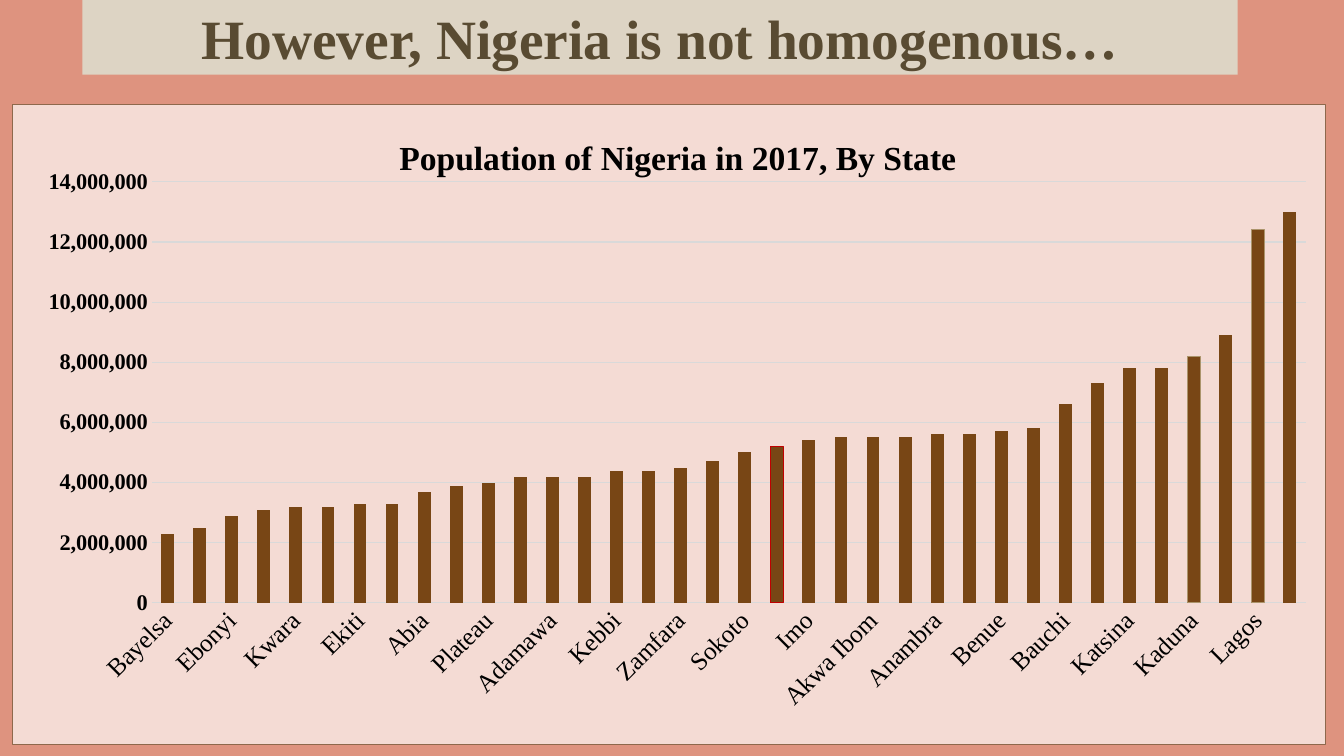
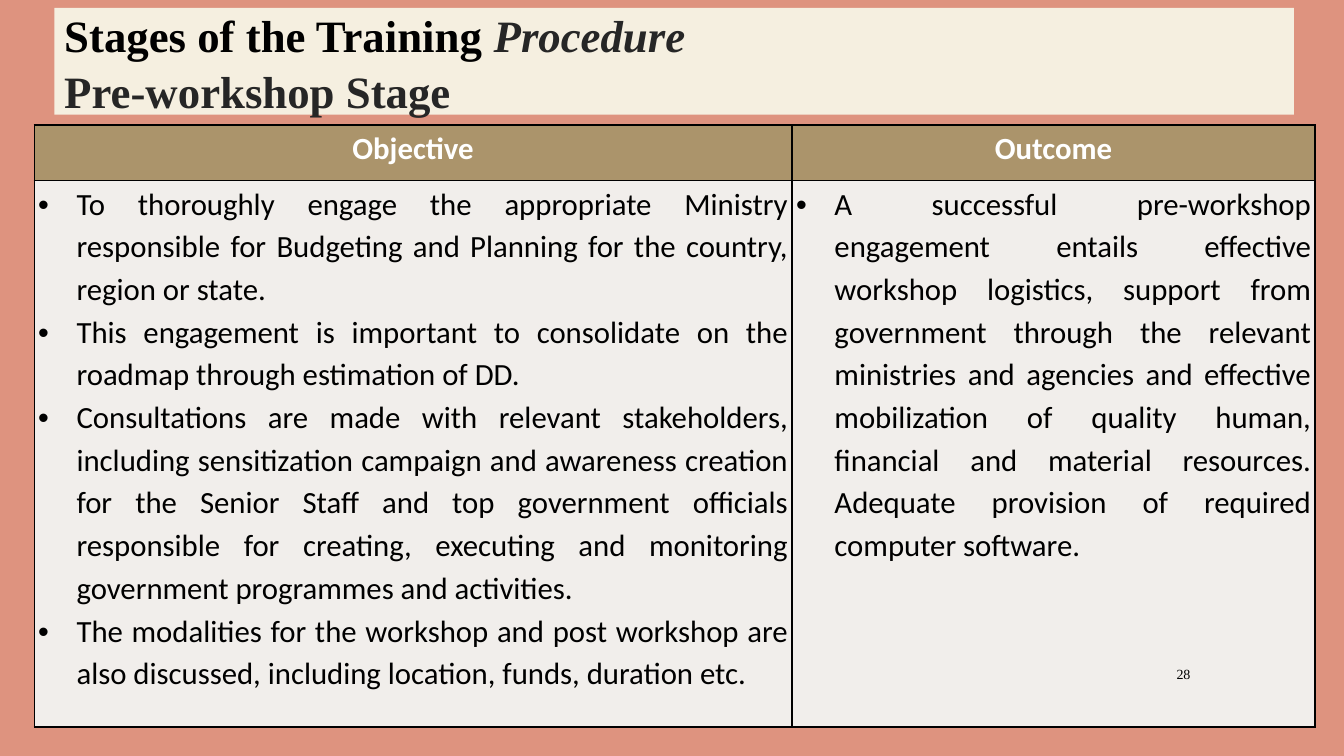
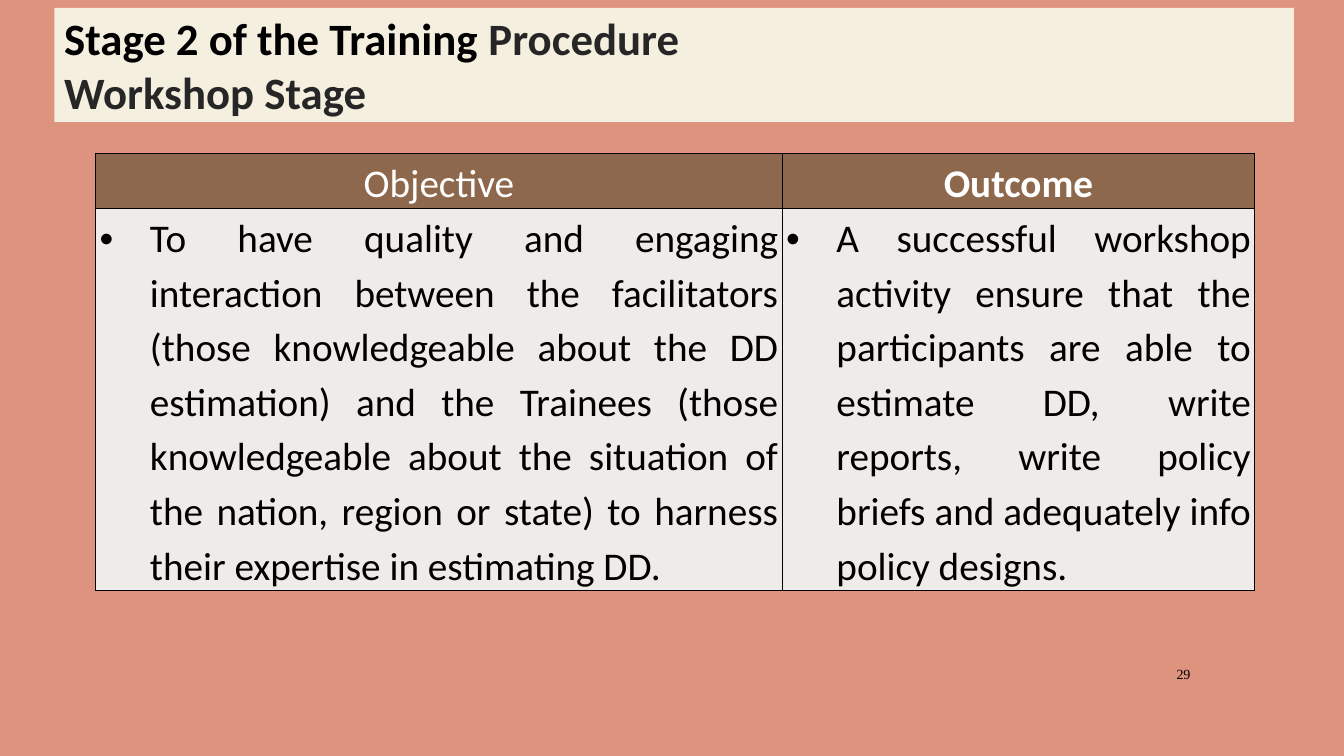
from lxml.etree import SubElement
from pptx import Presentation
from pptx.chart.data import CategoryChartData
from pptx.dml.color import RGBColor
from pptx.enum.chart import XL_CHART_TYPE as ChartType, XL_TICK_MARK as TickMark
from pptx.enum.text import MSO_ANCHOR as Anchor, PP_ALIGN as Align
from pptx.oxml import parse_xml
from pptx.oxml.ns import nsdecls, qn
from pptx.util import Cm, Pt

SERIF = "Times New Roman"
SANS = "Calibri"
BLACK, WHITE, CHARCOAL = "000000", "FFFFFF", "262626"
SALMON, BLUSH, CREAM, SAND = "DE937F", "F4DBD4", "F5EFE0", "DDD4C4"
TAN, UMBER, OLIVE, BRONZE = "AB946B", "8E684C", "594B32", "784615"
GREY, RED = "D9D9D9", "C00000"

POPULATION = {
    "Bayelsa": [2.3], "Nasarawa": [2.5], "Ebonyi": [2.9], "Taraba": [3.1],
    "Kwara": [3.2], "Gombe": [3.2], "Ekiti": [3.3], "Yobe": [3.3],
    "Abia": [3.7], "Cross River": [3.9], "Plateau": [4.0], "Edo": [4.2],
    "Adamawa": [4.2, 4.2], "Kebbi": [4.4], "Kogi": [4.4], "Zamfara": [4.5],
    "Ondo": [4.7], "Sokoto": [5.0], "Ogun": [5.2], "Imo": [5.4],
    "Akwa Ibom": [5.5, 5.5], "Niger": [5.5], "Anambra": [5.6],
    "Delta": [5.6], "Benue": [5.7], "Jigawa": [5.8], "Bauchi": [6.6],
    "Rivers": [7.3], "Katsina": [7.8], "Oyo": [7.8], "Kaduna": [8.2],
    "Enugu": [8.9], "Lagos": [12.4], "Kano": [13.0],
}
OUTLINED = {"Ogun": RED, "Kaduna": TAN, "Lagos": TAN}


def rgb(value):
    return RGBColor.from_string(value)


def paint(fill, value):
    fill.solid()
    fill.fore_color.rgb = rgb(value)


def style(font, size, color=BLACK, name=SERIF, bold=False, italic=False):
    font.size, font.name, font.bold, font.italic = Pt(size), name, bold, italic
    font.color.rgb = rgb(color)


def write(paragraph, text, **look):
    for number, line in enumerate(text.split("\n")):
        if number:
            paragraph.add_line_break()
        if line:
            run = paragraph.add_run()
            run.text = line
            style(run.font, **look)


def place(parent, index, **position):
    layout = parent.find(qn("c:layout"))
    if layout is None:
        layout = parse_xml(f"<c:layout {nsdecls('c')}/>")
        parent.insert(index, layout)
    manual = SubElement(layout, qn("c:manualLayout"))
    for tag, value in position.items():
        SubElement(manual, qn(f"c:{tag}"), val=str(value))


class Deck:
    def __init__(self):
        self.show = Presentation()
        self.show.slide_width, self.show.slide_height = Cm(33.87), Cm(19.05)

    def slide(self):
        self.page = self.show.slides.add_slide(self.show.slide_layouts[6])
        paint(self.page.background.fill, SALMON)

    def box(self, left, top, width, height, align):
        area = self.page.shapes.add_textbox(
            Cm(left), Cm(top), Cm(width), Cm(height))
        frame = area.text_frame
        frame.word_wrap = True
        frame.vertical_anchor = Anchor.MIDDLE
        frame.paragraphs[0].alignment = align
        return area, frame.paragraphs[0]

    def band(self, bounds, fill, runs, align=Align.LEFT, spacing=1.0, **look):
        area, heading = self.box(*bounds, align)
        paint(area.fill, fill)
        heading.line_spacing = spacing
        for text, change in runs:
            write(heading, text, **{**look, "bold": True, **change})

    def number(self, value):
        write(self.box(28.75, 16.59, 1.5, 0.79, Align.RIGHT)[1],
              str(value), size=10)

    def cell(self, cell, fill):
        cell.margin_left = cell.margin_right = Cm(0.1)
        cell.margin_top = cell.margin_bottom = 0
        for side in "LRTB":
            cell._tc.get_or_add_tcPr().append(parse_xml(
                f'<a:ln{side} {nsdecls("a")} w="12700"><a:solidFill>'
                f'<a:srgbClr val="{BLACK}"/></a:solidFill></a:ln{side}>'))
        paint(cell.fill, fill)

    def line(self, frame, first, align):
        paragraph = frame.paragraphs[0] if first else frame.add_paragraph()
        paragraph.alignment = align
        paragraph.line_spacing = 1.14
        return paragraph

    def stage_table(self, left, top, widths, heights, size, indent,
                    head_fill, body_fill, columns):
        table = self.page.shapes.add_table(
            2, len(columns), Cm(left), Cm(top),
            Cm(sum(widths)), Cm(sum(heights))).table
        table.first_row = table.horz_banding = False
        for row, height in zip(table.rows, heights):
            row.height = Cm(height)
        for index, (heading, bold, points) in enumerate(columns):
            table.columns[index].width = Cm(widths[index])
            head, body = table.cell(0, index), table.cell(1, index)
            self.cell(head, head_fill)
            self.cell(body, body_fill)
            write(self.line(head.text_frame, True, Align.CENTER), heading,
                  size=size, name=SANS, color=WHITE, bold=bold)
            for order, point in enumerate(points):
                item = self.line(body.text_frame, order == 0, Align.JUSTIFY)
                props = item._p.get_or_add_pPr()
                props.set("marL", str(Cm(indent)))
                props.set("indent", str(-Cm(indent)))
                SubElement(props, qn("a:buFont"), typeface="Arial")
                SubElement(props, qn("a:buChar"), char="•")
                write(item, point, size=size, name=SANS)

    def population_chart(self, left, top, width, height, title):
        bars = [(state, value) for state, values in POPULATION.items()
                for value in values]
        data = CategoryChartData(number_format="#,##0")
        data.categories = [state for state, _ in bars]
        data.add_series("Series 1", [round(v * 1_000_000) for _, v in bars])
        chart = self.page.shapes.add_chart(
            ChartType.COLUMN_STACKED, Cm(left), Cm(top), Cm(width),
            Cm(height), data).chart
        style(chart.font, 18)
        chart.has_legend = False
        chart.has_title = True
        write(chart.chart_title.text_frame.paragraphs[0], title,
              size=24, bold=True)
        place(chart.chart_title._element, 1, xMode="edge", yMode="edge",
              x=0.29, y=0.04)
        space = chart._chartSpace
        plot_area = space.chart.plotArea
        place(plot_area, 0, layoutTarget="inner", xMode="edge", yMode="edge",
              x=0.106, y=0.121, w=0.879, h=0.658)
        space.chart.addnext(parse_xml(
            f'<c:spPr {nsdecls("c", "a")}><a:solidFill><a:srgbClr '
            f'val="{BLUSH}"/></a:solidFill><a:ln w="9525"><a:solidFill>'
            f'<a:srgbClr val="{UMBER}"/></a:solidFill></a:ln></c:spPr>'))

        plot = chart.plots[0]
        plot.gap_width, plot.overlap = 150, 100
        plot.vary_by_categories = False
        series = plot.series[0]
        paint(series.format.fill, BRONZE)
        for index, (state, _) in enumerate(bars):
            if state in OUTLINED:
                look = series.points[index].format
                paint(look.fill, BRONZE)
                look.line.color.rgb = rgb(OUTLINED[state])
                look.line.width = Pt(0.75)

        states, people = chart.category_axis, chart.value_axis
        for axis in (states, people):
            axis.major_tick_mark = axis.minor_tick_mark = TickMark.NONE
        style(states.tick_labels.font, 18)
        style(people.tick_labels.font, 16, bold=True)
        states._element.find(qn("c:txPr")).find(qn("a:bodyPr")).set(
            "rot", "-2700000")
        states._element.find(qn("c:noMultiLvlLbl")).addprevious(
            parse_xml(f'<c:tickLblSkip {nsdecls("c")} val="2"/>'))
        people.minimum_scale, people.maximum_scale = 0, 14_000_000
        people.major_unit = 2_000_000
        people.tick_labels.number_format = "#,##0"
        people.tick_labels.number_format_is_linked = False
        people.format.line.fill.background()
        for rule in (states.format.line, people.major_gridlines.format.line):
            rule.color.rgb = rgb(GREY)
            rule.width = Pt(0.75)


def main():
    deck = Deck()

    deck.slide()
    deck.band((2.08, 0, 29.11, 1.88), SAND,
              [("However, Nigeria is not homogenous…", {})],
              align=Align.CENTER, size=39.6, color=OLIVE)
    deck.population_chart(0.3, 2.62, 33.12, 16.15,
                          "Population of Nigeria in 2017, By State")

    deck.slide()
    deck.band((1.37, 0.2, 31.24, 2.69), CREAM, [
        ("Stages of the Training ", {}),
        ("Procedure\n", {"color": CHARCOAL, "italic": True}),
        ("Pre-workshop Stage", {"color": CHARCOAL}),
    ], spacing=1.05, size=32)
    deck.stage_table(0.86, 3.15, (19.1, 13.18), (1.4, 13.77), 22, 0.97,
                     TAN, "F1EEEB", [
        ("Objective", True, [
            "To thoroughly engage the appropriate Ministry responsible for "
            "Budgeting and Planning for the country, region or state.",
            "This engagement is important to consolidate on the roadmap "
            "through estimation of DD.",
            "Consultations are made with relevant stakeholders, including "
            "sensitization campaign and awareness creation for the Senior "
            "Staff and top government officials responsible for creating, "
            "executing and monitoring government programmes and activities.",
            "The modalities for the workshop and post workshop are also "
            "discussed, including location, funds, duration etc.",
        ]),
        ("Outcome", True, [
            "A successful pre-workshop engagement entails effective workshop "
            "logistics, support from government through the relevant "
            "ministries and agencies and effective mobilization of quality "
            "human, financial and material resources. Adequate provision of "
            "required computer software.",
        ]),
    ])
    deck.number(28)

    deck.slide()
    deck.band((1.37, 0.2, 31.24, 2.87), CREAM, [
        ("Stage 2 of the Training ", {}),
        ("Procedure\nWorkshop Stage", {"color": CHARCOAL}),
    ], size=32, name=SANS)
    deck.stage_table(2.41, 3.86, (17.3, 11.91), (1.4, 9.63), 28, 1.27,
                     UMBER, "EEEBE9", [
        ("Objective", False, [
            "To have quality and engaging interaction between the "
            "facilitators (those knowledgeable about the DD estimation) and "
            "the Trainees (those knowledgeable about the situation of the "
            "nation, region or state) to harness their expertise in "
            "estimating DD.",
        ]),
        ("Outcome", True, [
            "A successful workshop activity ensure that the participants are "
            "able to estimate DD, write reports, write policy briefs and "
            "adequately info policy designs.",
        ]),
    ])
    deck.number(29)

    deck.show.save("out.pptx")


if __name__ == "__main__":
    main()
